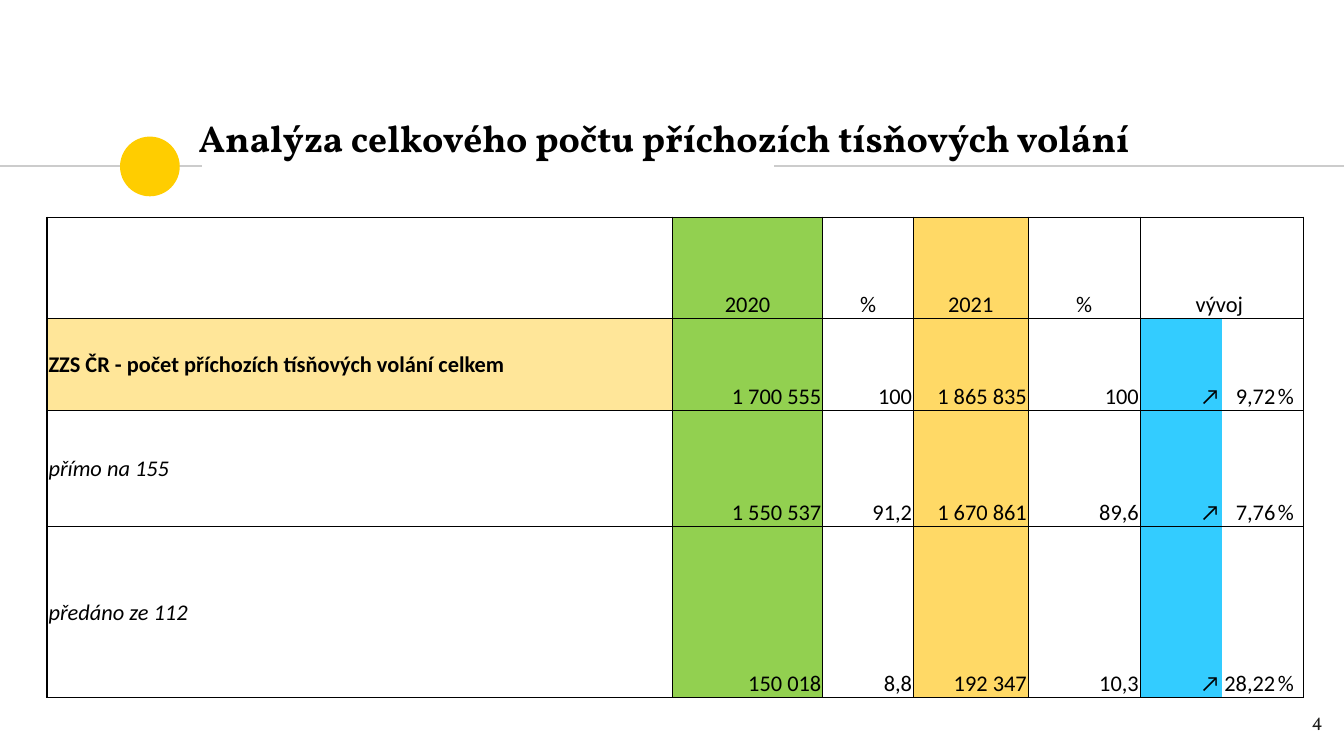
from lxml import etree
from pptx import Presentation
from pptx import util as u
from pptx.dml import color
from pptx.enum import shapes, text
from pptx.oxml import ns

Pt = u.Pt
LEFT, MID, RIGHT = text.PP_ALIGN.LEFT, text.PP_ALIGN.CENTER, text.PP_ALIGN.RIGHT
CENTRE, BASE = text.MSO_ANCHOR.MIDDLE, text.MSO_ANCHOR.BOTTOM


def tint(code):
    return color.RGBColor.from_string(code)


class Deck:
    """Holds the style and the current slide, and draws each kind of element."""

    head, body = "Vollkorn", "Calibri"
    ink, rule, gold = "000000", "CCCCCC", "FFCD00"
    thick, thin = 1, 0.5

    def __init__(self, wide, high):
        self.file = Presentation()
        self.file.slide_width, self.file.slide_height = Pt(wide), Pt(high)
        self.slide = self.file.slides.add_slide(self.file.slide_layouts[6])

    def line(self, start, end, y):
        item = self.slide.shapes.add_connector(
            shapes.MSO_CONNECTOR.STRAIGHT, Pt(start), Pt(y), Pt(end), Pt(y))
        item.line.color.rgb = tint(self.rule)
        item.line.width = Pt(0.75)
        etree.SubElement(item._element.spPr, ns.qn("a:effectLst"))

    def dot(self, x, y, size):
        item = self.slide.shapes.add_shape(
            shapes.MSO_SHAPE.OVAL, Pt(x), Pt(y), Pt(size), Pt(size))
        item.shadow.inherit = False
        item.fill.solid()
        item.fill.fore_color.rgb = tint(self.gold)
        item.line.fill.background()

    def style(self, frame, words, face, size, code, align, bold=False, slant=False):
        para = frame.paragraphs[0]
        para.text, para.alignment = words, align
        font = para.font
        font.name, font.size, font.bold, font.italic = face, Pt(size), bold, slant
        font.color.rgb = tint(code)

    def label(self, box, words, size, code, align=LEFT, anchor=text.MSO_ANCHOR.TOP, bold=False):
        frame = self.slide.shapes.add_textbox(*map(Pt, box)).text_frame
        frame.word_wrap = True
        frame.vertical_anchor = anchor
        frame.margin_left = frame.margin_right = Pt(7.2)
        frame.margin_top = frame.margin_bottom = Pt(7.2)
        self.style(frame, words, self.head, size, code, align, bold)

    def edge(self, cell, sides):
        for spot, (side, width) in enumerate(zip("LRTB", sides)):
            line = etree.Element(ns.qn("a:ln" + side), w=str(Pt(width)))
            if width:
                fill = etree.SubElement(line, ns.qn("a:solidFill"))
                etree.SubElement(fill, ns.qn("a:srgbClr"), val=self.ink)
            else:
                etree.SubElement(line, ns.qn("a:noFill"))
            cell._tc.get_or_add_tcPr().insert(spot, line)

    def cell(self, cell, words, fill, align, anchor, bold, slant):
        cell.margin_left = cell.margin_right = cell.margin_top = Pt(0.7)
        cell.margin_bottom = 0
        cell.vertical_anchor = anchor
        if fill:
            cell.fill.solid()
            cell.fill.fore_color.rgb = tint(fill)
        else:
            cell.fill.background()
        if words:
            self.style(cell.text_frame, words, self.body, 12, self.ink, align, bold, slant)

    def table(self, x, y, cols, rows, data, fills):
        grid = self.slide.shapes.add_table(
            len(rows), len(cols), Pt(x), Pt(y), Pt(sum(cols)), Pt(sum(rows))).table
        for part, size in zip(grid.columns, cols):
            part.width = Pt(size)
        for part, size in zip(grid.rows, rows):
            part.height = Pt(size)
        trend, last, end = 5, len(cols) - 1, len(rows) - 1
        grid.cell(0, trend).merge(grid.cell(0, last))
        for r, line in enumerate(data):
            for c, words in enumerate(line):
                cell = grid.cell(r, c)
                name = c == 0
                fill = fills.get(c) if r or c < trend else None
                if name:
                    fill = "FFE699" if r == 1 else None
                align = LEFT if c in (0, last) else RIGHT if r else MID
                self.cell(cell, words, fill, align, CENTRE if name else BASE,
                          name and r == 1, name and r > 1)
                final = c + cell.span_width > last
                self.edge(cell, (
                    self.thick if name else self.thin if c <= trend else 0,
                    self.thick if final else self.thin if c < trend else 0,
                    self.thin if r else self.thick,
                    self.thick if r == end else self.thin))


def main():
    deck = Deck(720, 405)
    deck.line(0, 108, 89)
    deck.dot(64.3, 73.2, 32)
    deck.line(414.7, 720, 89)
    deck.label((99.4, 56.2, 521.3, 34.6), "Analýza celkového počtu příchozích tísňových volání",
               20, deck.ink, anchor=CENTRE, bold=True)
    deck.label((672.5, 373.7, 43.2, 31), "4", 10, "1D1D1B", RIGHT)
    data = [
        ["", "2020", "%", "2021", "%", "vývoj ", "", ""],
        ["ZZS ČR - počet příchozích tísňových volání celkem",
         "1 700 555", "100", "1 865 835", "100", "↗", "9,72", "%"],
        ["přímo na 155", "1 550 537", "91,2", "1 670 861", "89,6", "↗", "7,76", "%"],
        ["předáno ze 112", "150 018", "8,8", "192 347", "10,3", "↗", "28,22", "%"],
    ]
    deck.table(25.3, 116.5, [335, 80.4, 48.6, 61.5, 60, 43.7, 29.5, 14.5],
               [54, 49.5, 62, 91.6], data, {1: "92D050", 3: "FFD966", 5: "33CCFF"})
    deck.file.save("out.pptx")


if __name__ == "__main__":
    main()
